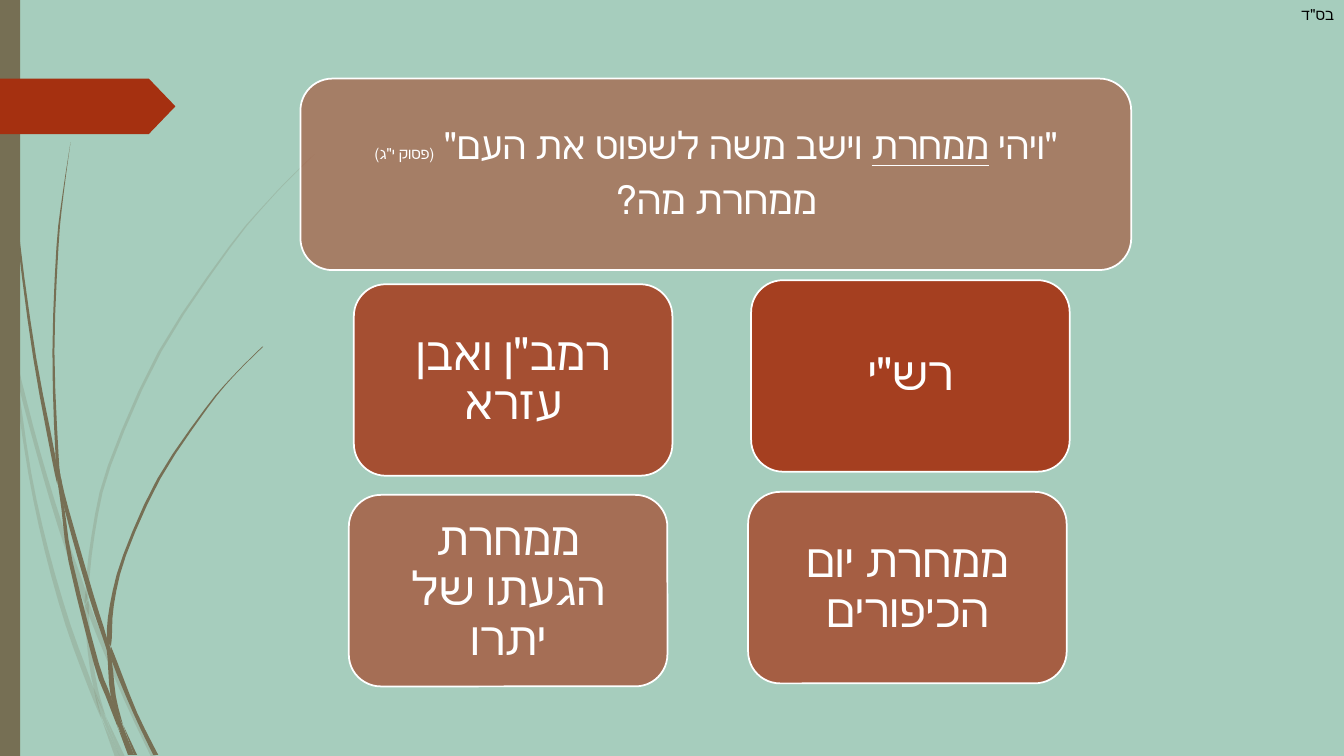
"""Build a Hebrew slide that asks a verse question and gives two answers."""
from lxml.etree import SubElement
from pptx import Presentation
from pptx.dml.color import RGBColor
from pptx.enum.shapes import MSO_SHAPE
from pptx.enum.text import MSO_ANCHOR, MSO_AUTO_SIZE, PP_ALIGN
from pptx.oxml.ns import qn
from pptx.util import Inches, Pt

ROUND, RECT, ARROW = MSO_SHAPE.ROUNDED_RECTANGLE, MSO_SHAPE.RECTANGLE, MSO_SHAPE.PENTAGON
MIDDLE, GROW, FIXED = MSO_ANCHOR.MIDDLE, MSO_AUTO_SIZE.SHAPE_TO_FIT_TEXT, MSO_AUTO_SIZE.NONE
CENTER, RIGHT = PP_ALIGN.CENTER, PP_ALIGN.RIGHT

THEME = {
    "font": "TeX Gyre Adventor",
    "back": "A6CDBD", "stem": "766F54", "rust": "A53010", "white": "FFFFFF", "black": "000000",
    "card": 33, "verse": 27, "ask": 28, "small": 11,
}

deck = Presentation()
deck.slide_width, deck.slide_height = Inches(13.33), Inches(7.5)
STEP = deck.slide_height // 750
slide = deck.slides.add_slide(deck.slide_layouts[5])
shapes = slide.shapes
slide.background.fill.solid()
slide.background.fill.fore_color.rgb = RGBColor.from_string(THEME["back"])


def paint(shape, color, alpha=100, edge=False):
    shape.shadow.inherit = False
    shape.fill.solid()
    shape.fill.fore_color.rgb = RGBColor.from_string(THEME[color])
    if alpha < 100:
        tone = shape.element.spPr.find(".//" + qn("a:srgbClr"))
        SubElement(tone, qn("a:alpha")).set("val", str(alpha * 1000))
    if edge:
        shape.line.color.rgb = RGBColor.from_string(THEME["white"])
        shape.line.width = Pt(1.25)
    else:
        shape.line.fill.background()


def write(para, runs, align=CENTER, color="white"):
    para.alignment = align
    para._p.get_or_add_pPr().set("rtl", "1")
    if align == CENTER:
        para.line_spacing = 0.9
        para.space_after = Pt(round(0.35 * THEME[runs[0][1]]))
    for text, size, under in runs:
        run = para.add_run()
        run.text = text
        run.font.name = THEME["font"]
        run.font.size = Pt(THEME[size])
        run.font.underline = under
        run.font.color.rgb = RGBColor.from_string(THEME[color])


FAINT = [
    [(282, 0, 0), (299, 0, 4), (322, 5, 9), (350, 11, 11)],
    [(345, 14, 14), (376, 17, 21), (449, 36, 40), (521, 57, 62), (586, 79, 85), (599, 84, 84)],
    [(596, 88, 88), (610, 88, 93), (694, 123, 128), (751, 150, 155)],
    [(711, 105, 105), (751, 119, 124)],
    [(350, 11, 11), (376, 14, 17), (469, 28, 31), (545, 44, 48), (620, 65, 70),
     (683, 88, 93), (714, 101, 101)],
    [(599, 84, 84), (610, 84, 88), (646, 87, 91), (683, 93, 97), (711, 105, 105)],
    [(153, 312, 312), (175, 289, 290), (198, 267, 268), (245, 227, 229), (349, 157, 160),
     (462, 107, 110), (530, 91, 94), (584, 85, 88), (596, 88, 88)],
    [(714, 101, 101), (751, 114, 119)],
    [(586, 85, 85), (599, 84, 88), (610, 88, 88)],
    [(683, 93, 93), (707, 99, 103), (751, 119, 119)],
]
DARK = [
    [(0, 3, 4), (110, 7, 8), (233, 17, 19), (355, 33, 36), (453, 51, 55), (481, 57, 57)],
    [(472, 60, 60), (505, 64, 68), (591, 88, 93), (633, 102, 106), (645, 106, 106)],
    [(641, 110, 110), (656, 111, 116), (707, 132, 136), (749, 152, 157)],
    [(477, 57, 57), (505, 61, 64), (557, 68, 72), (658, 93, 98), (691, 105, 110), (722, 117, 117)],
    [(141, 70, 70), (193, 62, 63), (245, 56, 58), (349, 52, 54), (450, 55, 58), (472, 60, 60)],
    [(719, 122, 122), (749, 133, 136)],
    [(449, 55, 55), (477, 57, 61), (505, 64, 64)],
    [(344, 260, 261), (373, 231, 232), (406, 203, 205), (475, 156, 159), (551, 122, 125),
     (600, 109, 113), (632, 106, 111), (641, 110, 110)],
    [(722, 117, 117), (749, 127, 131)],
    [(645, 106, 106), (656, 107, 111), (691, 110, 115), (719, 122, 122)],
    [(631, 106, 106), (645, 106, 110), (656, 111, 111)],
    [(691, 110, 110), (718, 116, 121), (749, 130, 133)],
]
PARTS = 3
for alpha, blades in ((20, FAINT), (100, DARK)):
    for knots in blades:
        ends = [knots[0], *knots, knots[-1]]
        curve = []
        for four in zip(ends, ends[1:], ends[2:], ends[3:]):
            for part in range(PARTS):
                t = part / PARTS
                curve.append([STEP * (b + t * (c - a) / 2 + t * t * (a - 2.5 * b + 2 * c - d / 2)
                                      + t ** 3 * (1.5 * (b - c) + (d - a) / 2))
                              for a, b, c, d in zip(*four)])
        curve.append([STEP * value for value in knots[-1]])
        edges = [(left, row) for row, left, _ in curve]
        edges += [(right, row) for row, _, right in curve[::-1]]
        path = shapes.build_freeform(*edges[0])
        path.add_line_segments(edges[1:], close=True)
        paint(path.convert_to_shape(), "stem", alpha)

paint(shapes.add_shape(RECT, 0, 0, 20 * STEP, deck.slide_height), "stem")
arrow = shapes.add_shape(ARROW, 0, 78 * STEP, 174 * STEP, 55 * STEP)
arrow.adjustments[0] = 0.48
paint(arrow, "rust")

WIDE, HIGH = 316 * STEP, 190 * STEP
CARDS = [
    (745, 278, 'רש"י'),
    (351, 282, 'רמב"ן ואבן עזרא'),
    (742, 488, "ממחרת יום הכיפורים"),
    (346, 491, "ממחרת הגעתו של יתרו"),
]
for rank, (left, top, text) in enumerate(CARDS):
    card = shapes.add_shape(ROUND, left * STEP, top * STEP, WIDE, HIGH)
    paint(card, "rust", 90 - 10 * rank, True)
    frame = card.text_frame
    frame.word_wrap, frame.vertical_anchor = True, MIDDLE
    frame.margin_left = frame.margin_right = frame.margin_top = frame.margin_bottom = 14 * STEP
    write(frame.paragraphs[0], [(text, "card", False)])

head = shapes.add_shape(ROUND, 298 * STEP, 78 * STEP, 824 * STEP, HIGH)
paint(head, "rust", 50, True)
title = shapes.title
title.left, title.top, title.width, title.height = (n * STEP for n in (307, 88, 806, 171))
head.element.addnext(title.element)
frame = title.text_frame
frame.word_wrap, frame.vertical_anchor, frame.auto_size = True, MIDDLE, FIXED
frame.margin_left = frame.margin_right = frame.margin_top = frame.margin_bottom = 11 * STEP
write(frame.paragraphs[0], [
    ('"ויהי ', "verse", False),
    ("ממחרת", "verse", True),
    (' וישב משה לשפוט את העם" ', "verse", False),
    ('(פסוק י"ג)', "small", False),
])
write(frame.add_paragraph(), [("ממחרת מה?", "ask", False)])

note = shapes.add_textbox(1248 * STEP, 0, 85 * STEP, 29 * STEP)
note.text_frame.word_wrap, note.text_frame.auto_size = True, GROW
write(note.text_frame.paragraphs[0], [('בס"ד', "small", False)], RIGHT, "black")

deck.save("out.pptx")
